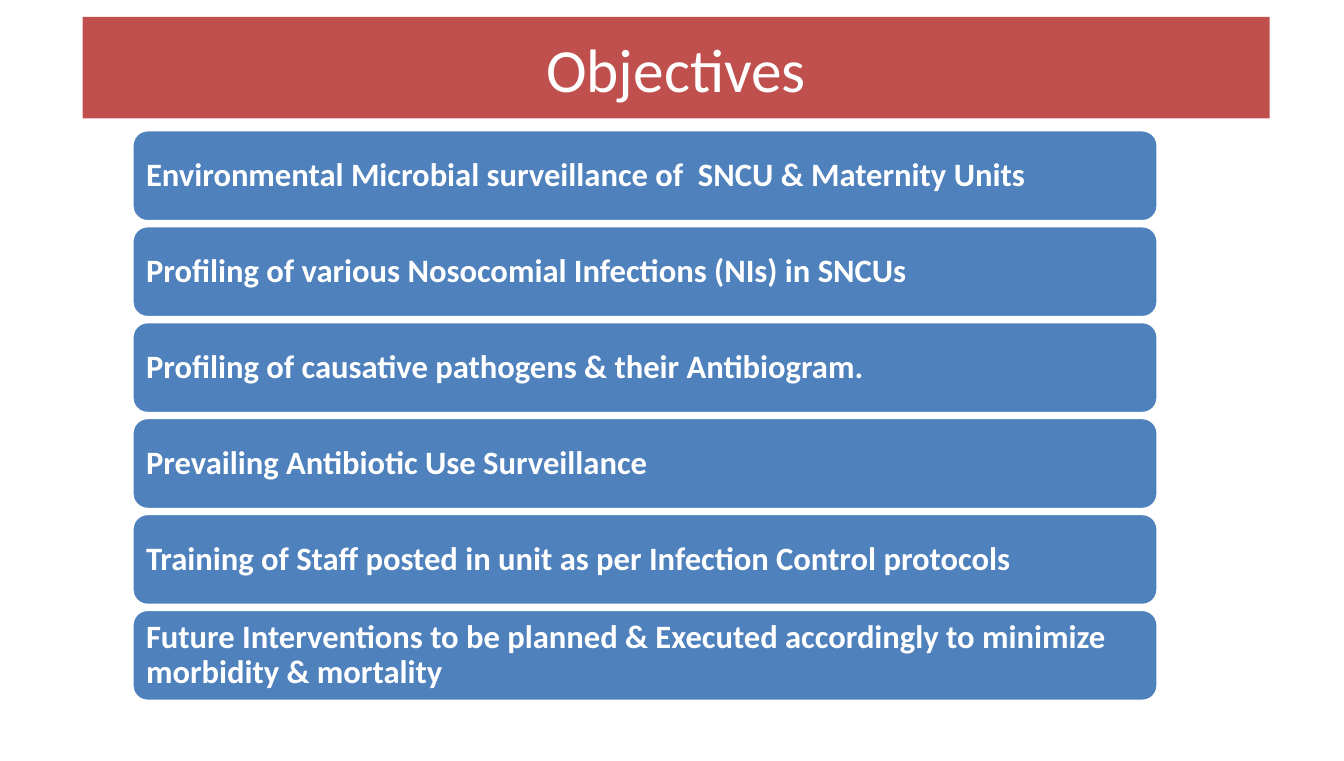
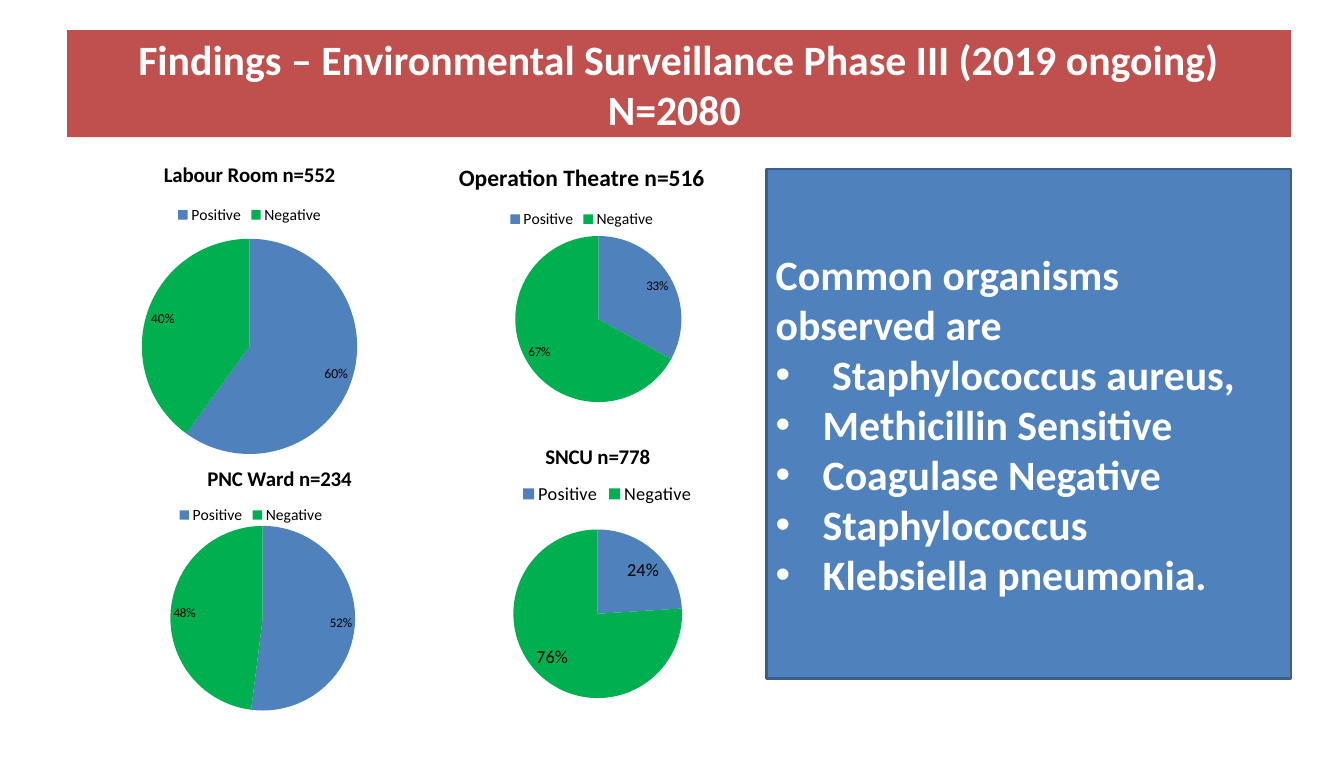
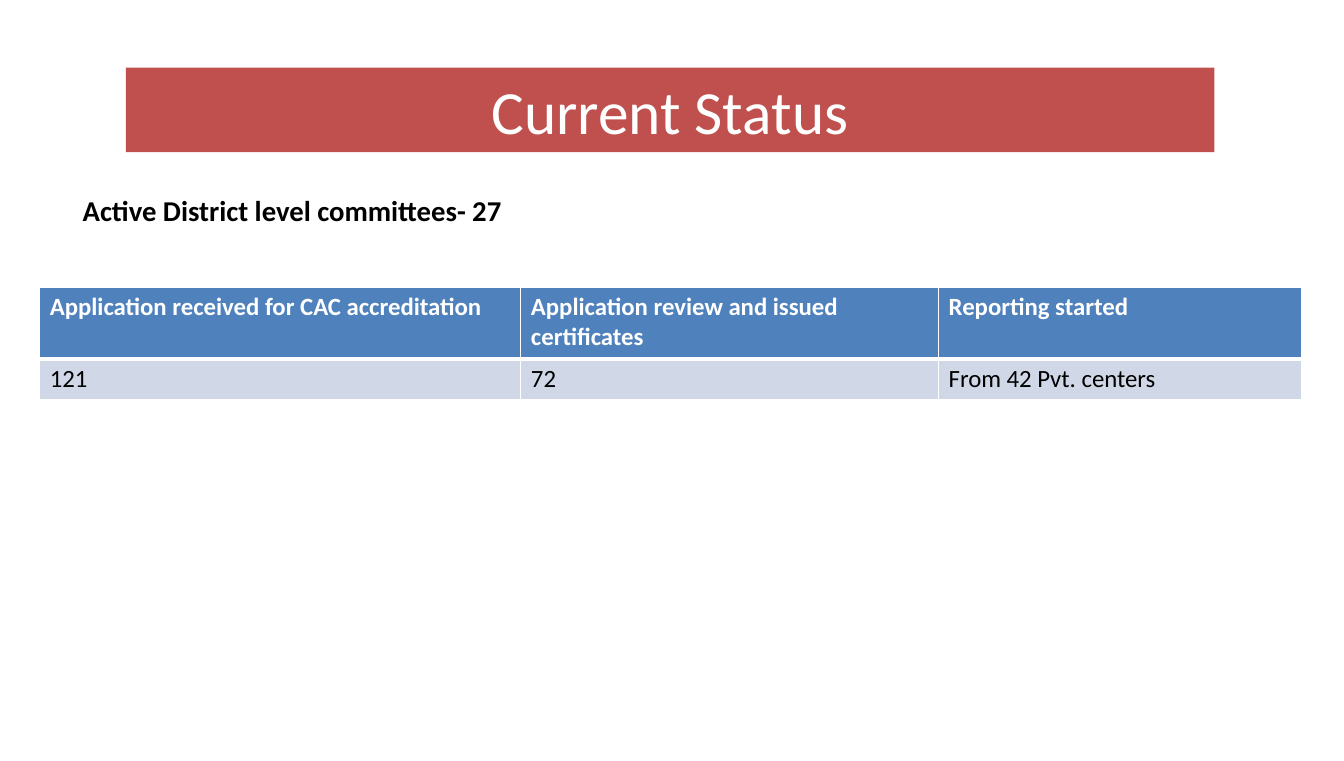
from lxml import etree
from pptx import Presentation
from pptx import util as u
from pptx.chart.data import CategoryChartData
from pptx.dml.color import RGBColor
from pptx.enum import chart as charts, shapes, text
from pptx.oxml import parse_xml
from pptx.oxml.ns import nsdecls, qn

WHITE = RGBColor(0xFF, 0xFF, 0xFF)
BLACK = RGBColor(0x00, 0x00, 0x00)
RED = RGBColor(0xC0, 0x50, 0x4D)
BLUE = RGBColor(0x4F, 0x81, 0xBD)
DARK_BLUE = RGBColor(0x3A, 0x5F, 0x8C)
GREEN = RGBColor(0x00, 0xB0, 0x50)
PALE_BLUE = RGBColor(0xD0, 0xD8, 0xE8)
FONT = "Calibri"
COLUMNS, ROWS = 143, 81

deck = Presentation()
deck.slide_width, deck.slide_height = u.Inches(14.3), u.Inches(8.1)


def area(left, top, width, height):
    """Turn grid columns and rows into slide lengths."""
    column, row = deck.slide_width / COLUMNS, deck.slide_height / ROWS
    return [round(n) for n in (left * column, top * row, width * column, height * row)]


def add_block(page, kind, place, fill, lines, size, bold=True, align=text.PP_ALIGN.LEFT, line=None):
    """Add a filled shape with one white paragraph for each line of text."""
    shape = page.shapes.add_shape(kind, *area(*place))
    shape.shadow.inherit = False
    shape.fill.solid()
    shape.fill.fore_color.rgb = fill
    if line:
        shape.line.color.rgb = line
        shape.line.width = u.Pt(2)
    else:
        shape.line.fill.background()
    frame = shape.text_frame
    frame.word_wrap = True
    frame.vertical_anchor = text.MSO_ANCHOR.MIDDLE
    for index, words in enumerate(lines):
        para = frame.paragraphs[0] if index == 0 else frame.add_paragraph()
        para.text = words
        para.alignment = align
        para.font.name, para.font.size, para.font.bold = FONT, u.Pt(size), bold
        para.font.color.rgb = WHITE
    return shape


# Title bands
titles = [
    ("Objectives", (8.8, 1.8, 126.3, 10.8), 47, False),
    ("Findings – Environmental Surveillance Phase III (2019 ongoing)\vN=2080 ",
     (7.15, 3.2, 130.2, 11.4), 32, True),
    ("Current Status", (13.4, 7.2, 115.8, 9), 47, False),
]
pages = []
for title, place, size, bold in titles:
    page = deck.slides.add_slide(deck.slide_layouts[6])
    add_block(page, shapes.MSO_SHAPE.RECTANGLE, place, RED, [title], size, bold,
              text.PP_ALIGN.CENTER)
    pages.append(page)
objectives_page, findings_page, status_page = pages

# Objectives
objectives = [
    "Environmental Microbial surveillance of  SNCU & Maternity Units",
    "Profiling of various Nosocomial Infections (NIs) in SNCUs",
    "Profiling of causative pathogens & their Antibiogram.",
    "Prevailing Antibiotic Use Surveillance",
    "Training of Staff posted in unit as per Infection Control protocols",
    "Future Interventions to be planned & Executed accordingly to minimize morbidity & mortality",
]
for index, objective in enumerate(objectives):
    bar = add_block(objectives_page, shapes.MSO_SHAPE.ROUNDED_RECTANGLE,
                    (14.08, 13.86 + 10.21 * index, 109.1, 9.7), BLUE, [objective], 25, line=WHITE)
    bar.text_frame.paragraphs[0].line_spacing = 0.9

# Findings: place, title, title size, legend size, label size, values,
# then shares of the chart for the plot, the title corner and the legend corner
pies = [
    ((43.2, 45.5, 40.8, 34.2), "SNCU n=778", 16, 14, 14, (24, 76),
     (0.28, 0.25, 0.44, 0.66), None, (0.29, 0.16)),
    ((3.2, 15.5, 46.7, 34.2), "Labour Room n=552", 16, 12, 10.5, (60, 40),
     (0.25, 0.29, 0.5, 0.67), None, None),
    ((1.5, 47.5, 50.4, 31.3), "PNC Ward n=234", 16, 12, 10, (52, 48),
     (0.33, 0.27, 0.39, 0.63), (0.4, 0.05), None),
    ((39.8, 15.5, 44.2, 32.4), "Operation Theatre n=516", 18, 12, 10, (33, 67),
     (0.34, 0.24, 0.4, 0.66), None, None),
]
for (place, title, title_size, legend_size, label_size, values,
     plot_shares, title_corner, legend_corner) in pies:
    data = CategoryChartData()
    data.categories = ["Positive", "Negative"]
    data.add_series("Series 1", values)
    chart = findings_page.shapes.add_chart(charts.XL_CHART_TYPE.PIE, *area(*place), data).chart
    chart.font.name, chart.font.size = FONT, u.Pt(label_size)
    chart.font.color.rgb = BLACK
    chart.has_title = True
    para = chart.chart_title.text_frame.paragraphs[0]
    para.text = title
    para.font.name, para.font.size, para.font.bold = FONT, u.Pt(title_size), True
    para.font.color.rgb = BLACK
    chart.has_legend = True
    chart.legend.position = charts.XL_LEGEND_POSITION.TOP
    chart.legend.include_in_layout = False
    chart.legend.font.size = u.Pt(legend_size)

    pie = chart.plots[0]
    pie.vary_by_categories = True
    for index, colour in enumerate((BLUE, GREEN)):
        slice_fill = pie.series[0].points[index].format.fill
        slice_fill.solid()
        slice_fill.fore_color.rgb = colour
    pie.has_data_labels = True
    labels = pie.data_labels
    labels.show_percentage, labels.show_value = True, False
    labels.number_format, labels.number_format_is_linked = "0%", False
    labels.position = charts.XL_LABEL_POSITION.BEST_FIT
    labels.font.size = u.Pt(label_size)

    # Manual layouts of the plot and, where given, of the title and legend
    layouts = [
        (chart._chartSpace.chart.plotArea, 0, plot_shares, '<c:layoutTarget val="inner"/>'),
        (chart.chart_title._element, 1, title_corner, ""),
        (chart.legend._element, 1, legend_corner, ""),
    ]
    for parent, position, shares, target in layouts:
        if not shares:
            continue
        for old in parent.findall(qn("c:layout")):
            parent.remove(old)
        modes = '<c:xMode val="edge"/><c:yMode val="edge"/>'
        sizes = "".join(f'<c:{key} val="{share}"/>' for key, share in zip("xywh", shares))
        parent.insert(position, parse_xml(
            f'<c:layout {nsdecls("c")}><c:manualLayout>{target}{modes}{sizes}'
            '</c:manualLayout></c:layout>'))

organisms = ["Common organisms observed are", " Staphylococcus aureus,", "Methicillin Sensitive",
             "Coagulase Negative", "Staphylococcus", "Klebsiella pneumonia."]
organism_box = add_block(findings_page, shapes.MSO_SHAPE.RECTANGLE, (81.55, 18, 55.8, 54.2),
                         BLUE, organisms, 32, line=DARK_BLUE)
for para in organism_box.text_frame.paragraphs[1:]:
    properties = para._p.get_or_add_pPr()
    properties.set("marL", str(u.Inches(0.5)))
    properties.set("indent", str(-u.Inches(0.5)))
    etree.SubElement(properties, qn("a:buFont")).set("typeface", "Arial")
    etree.SubElement(properties, qn("a:buChar")).set("char", "•")

# Current status
cells = [
    ["Application received for CAC accreditation", "Application review and issued certificates",
     "Reporting started"],
    ["121", "72", "From 42 Pvt. centers"],
]
# Row height, fill, font colour, bold, top and bottom border widths
row_styles = [(7.6, BLUE, WHITE, True, 1, 3), (4.35, PALE_BLUE, BLACK, False, 1, 1)]
table = status_page.shapes.add_table(2, 3, *area(4.2, 30.6, 134.3, 11.95)).table
for column, width in zip(table.columns, (51.2, 44.45, 38.65)):
    column.width = area(0, 0, width, 0)[2]
for row, words, (height, fill, colour, bold, top, bottom) in zip(table.rows, cells, row_styles):
    row.height = area(0, 0, 0, height)[3]
    for cell, label in zip(row.cells, words):
        cell.text = label
        cell.margin_left = cell.margin_right = u.Inches(0.11)
        font = cell.text_frame.paragraphs[0].font
        font.name, font.size, font.bold = FONT, u.Pt(19), bold
        font.color.rgb = colour
        borders = cell._tc.get_or_add_tcPr()
        for side, width in (("L", 1), ("R", 1), ("T", top), ("B", bottom)):
            borders.append(parse_xml(
                f'<a:ln{side} {nsdecls("a")} w="{u.Pt(width)}"><a:solidFill>'
                f'<a:srgbClr val="{WHITE}"/></a:solidFill></a:ln{side}>'))
        cell.fill.solid()
        cell.fill.fore_color.rgb = fill

committee_box = status_page.shapes.add_textbox(*area(7.7, 20, 92, 8))
committee_box.text_frame.word_wrap = True
committee_box.text_frame.margin_left = u.Inches(0.11)
para = committee_box.text_frame.paragraphs[0]
para.text = "Active District level committees- 27"
para.font.name, para.font.size, para.font.bold = FONT, u.Pt(22), True
para.font.color.rgb = BLACK

deck.save("out.pptx")
